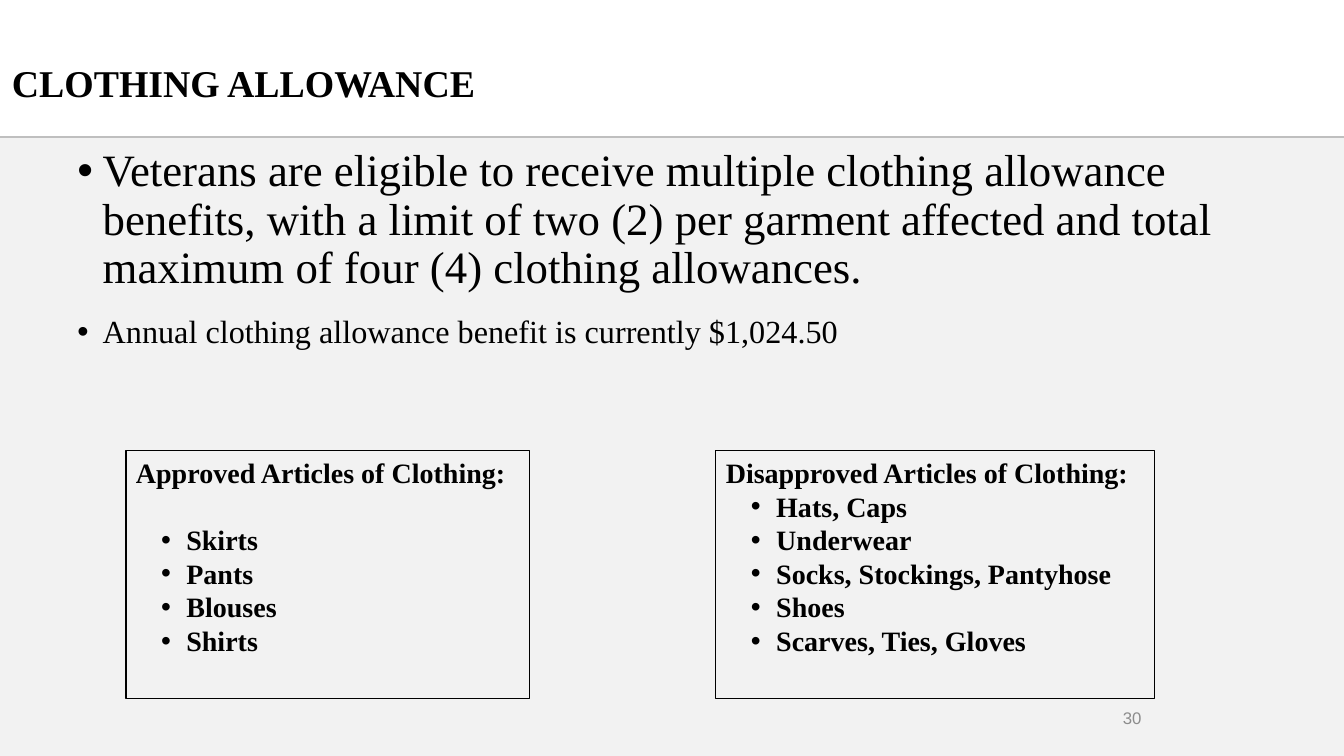
import pptx
import pptx.util
import pptx.dml.color
import pptx.enum.shapes
import pptx.enum.text
import pptx.oxml.ns
import lxml.etree

Inches = pptx.util.Inches
Pt = pptx.util.Pt
qn = pptx.oxml.ns.qn
ALIGN = pptx.enum.text.PP_ALIGN
ANCHOR = pptx.enum.text.MSO_ANCHOR
SERIF = "Times New Roman"


def color(value):
    return pptx.dml.color.RGBColor.from_string(value)


def write(frame, text, size, font=SERIF, ink="000000", bold=False, align=ALIGN.LEFT,
          margin=None, before=0, after=0, spacing=1.0):
    """Fill the empty first paragraph or add one; a margin in inches makes it a bullet."""
    first = frame.paragraphs[0]
    paragraph = frame.add_paragraph() if first.runs else first
    if margin is not None:
        properties = paragraph._p.get_or_add_pPr()
        properties.set("marL", str(Inches(margin)))
        properties.set("indent", str(Inches(-0.25)))
        lxml.etree.SubElement(properties, qn("a:buFont")).set("typeface", "Arial")
        lxml.etree.SubElement(properties, qn("a:buChar")).set("char", "•")
    paragraph.alignment = align
    paragraph.line_spacing = spacing
    paragraph.space_before = Pt(before)
    paragraph.space_after = Pt(after)
    run = paragraph.add_run()
    run.text = text
    run.font.size = Pt(size)
    run.font.name = font
    run.font.bold = bold
    run.font.color.rgb = color(ink)


presentation = pptx.Presentation()
presentation.slide_width = Inches(13.33)
presentation.slide_height = Inches(7.5)
slide = presentation.slides.add_slide(presentation.slide_layouts[6])
shapes = slide.shapes

# Background panel and the rule under the heading
panel = shapes.add_shape(pptx.enum.shapes.MSO_SHAPE.RECTANGLE,
                         Inches(0), Inches(1.37), Inches(13.33), Inches(6.13))
panel.shadow.inherit = False
panel.fill.solid()
panel.fill.fore_color.rgb = color("F2F2F2")
panel.line.fill.background()

rule = shapes.add_connector(pptx.enum.shapes.MSO_CONNECTOR.STRAIGHT,
                            Inches(0), Inches(1.36), Inches(13.33), Inches(1.36))
rule.line.color.rgb = color("BFBFBF")
rule.line.width = Pt(1.5)
lxml.etree.SubElement(rule._element.spPr, qn("a:effectLst"))

# Benefit rules
benefits = shapes.add_textbox(Inches(0.67), Inches(1.42), Inches(12), Inches(3.22)).text_frame
benefits.word_wrap = True
write(benefits, "Veterans are eligible to receive multiple clothing allowance benefits, with a limit "
      "of two (2) per garment affected and total maximum of four (4) clothing allowances.",
      32, margin=0.25, after=6, spacing=0.9)
write(benefits, "Annual clothing allowance benefit is currently $1,024.50",
      23, margin=0.25, before=10, after=6, spacing=0.9)

# Page number and heading
page_number = shapes.add_textbox(Inches(9.17), Inches(6.92), Inches(2.25), Inches(0.4)).text_frame
page_number.word_wrap = True
page_number.vertical_anchor = ANCHOR.MIDDLE
write(page_number, "30", 12, font="Arial", ink="8C8C8C", align=ALIGN.RIGHT)

heading = shapes.add_textbox(Inches(0.02), Inches(0.42), Inches(8.97), Inches(0.8)).text_frame
heading.word_wrap = True
heading.vertical_anchor = ANCHOR.MIDDLE
write(heading, "CLOTHING ALLOWANCE", 27, bold=True)

# Clothing lists: left, width, gap below the list title in points, title, articles
clothing_lists = [
    (1.25, 4, 24, "Approved Articles of Clothing:",
     ["Skirts", "Pants", "Blouses", "Shirts"]),
    (7.1, 4.35, 0, "Disapproved Articles of Clothing:",
     ["Hats, Caps", "Underwear", "Socks, Stockings, Pantyhose", "Shoes",
      "Scarves, Ties, Gloves"]),
]
for left, width, gap, title, articles in clothing_lists:
    box = shapes.add_textbox(Inches(left), Inches(4.47), Inches(width), Inches(2.46))
    box.line.color.rgb = color("000000")
    box.line.width = Pt(0.75)
    box.text_frame.word_wrap = True
    write(box.text_frame, title, 20, bold=True, after=gap)
    for article in articles:
        write(box.text_frame, article, 20, bold=True, margin=0.5)

presentation.save("out.pptx")
